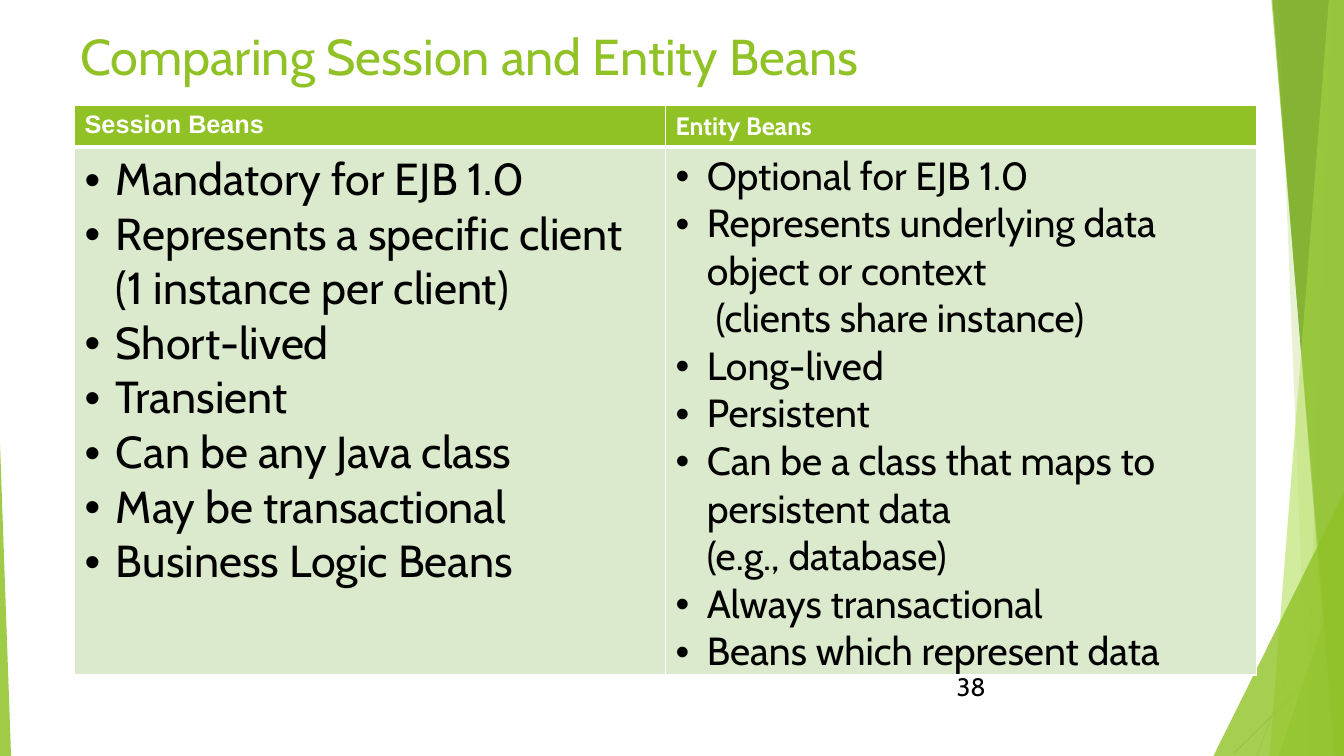
"""Build the slide that compares session and entity beans."""
import pptx
import pptx.dml.color
import pptx.enum.shapes
import pptx.enum.text
import pptx.oxml
import pptx.oxml.ns
import pptx.util

Inches, Pt = pptx.util.Inches, pptx.util.Pt
qn = pptx.oxml.ns.qn
MIDDLE = pptx.enum.text.MSO_ANCHOR.MIDDLE
GREEN, PALE, WHITE, BLACK = "90C226", "DBE9CD", "FFFFFF", "000000"
W, H, BASE = 13.33, 7.5, 7.51

TITLE = "Comparing Session and Entity Beans"
NUMBER = "38"
COLUMNS = [
    ("Session Beans", "Arial", 32, [
        "Mandatory for EJB 1.0",
        "Represents a specific client\n(1 instance per client)",
        "Short-lived",
        "Transient",
        "Can be any Java class",
        "May be transactional",
        "Business Logic Beans",
    ]),
    ("Entity Beans", "Cabin", 28, [
        "Optional for EJB 1.0",
        "Represents underlying data object or context\n (clients share instance)",
        "Long-lived",
        "Persistent",
        "Can be a class that maps to persistent data \n(e.g., database)",
        "Always transactional",
        "Beans which represent data",
    ]),
]
LINES = [((13.3, 6.43), (12.24, 7.47), "BFBFBF"),
         ((13.14, 5.72), (12.35, 7.8), "D9D9D9")]
# kind, geometry, colour, opacity
FACETS = [
    ("band", (13.21, 12.95), GREEN, 30),
    ("band", (12.68, 12.98), GREEN, 20),
    ("triangle", (12.68, 5.54, 0.66, 1), "54A021", 72),
    ("band", (12.62, 13.23), "3F7819", 70),
    ("band", (13.18, 12.59), "C0E474", 70),
    ("band", (12.61, 13.25), GREEN, 65),
    ("triangle", (12.03, 4.89, 1.3, 1), GREEN, 80),
    ("triangle", (0, 4.4, 0.11, 0), GREEN, 85),
]


def rgb(color):
    return pptx.dml.color.RGBColor.from_string(color)


def xml(tag, inner="", attrs=""):
    ns = pptx.oxml.ns.nsdecls("a")
    return pptx.oxml.parse_xml(f"<a:{tag} {ns} {attrs}>{inner}</a:{tag}>")


def write(p, text, size=18, font="Cabin", color=BLACK, bold=False, bullet=False):
    for i, part in enumerate(text.split("\n")):
        if i:
            p.add_line_break()
        r = p.add_run()
        r.text = part
        r.font.size, r.font.name, r.font.bold = Pt(size), font, bold
        r.font.color.rgb = rgb(color)
    if bullet:
        pPr = p._p.get_or_add_pPr()
        pPr.set("marL", str(Inches(0.31)))
        pPr.set("indent", str(-Inches(0.31)))
        pPr.append(xml("buFont", attrs='typeface="Arial"'))
        pPr.append(xml("buChar", attrs='char="•"'))


def add_text(s, box, text, **fmt):
    tf = s.shapes.add_textbox(*map(Inches, box)).text_frame
    tf.word_wrap, tf.vertical_anchor = True, MIDDLE
    write(tf.paragraphs[0], text, **fmt)


def add_line(s, start, end, color):
    line = s.shapes.add_connector(pptx.enum.shapes.MSO_CONNECTOR.STRAIGHT,
                                  *map(Inches, start + end))
    line.line.color.rgb, line.line.width = rgb(color), Pt(0.75)
    line._element.spPr.append(xml("effectLst"))


def add_facet(s, kind, geometry, color, opacity):
    if kind == "band":
        top, bottom = geometry
        points = [(top, 0), (W, 0), (W, BASE), (bottom, BASE)]
        points = [(Inches(x), Inches(y)) for x, y in points]
        fb = s.shapes.build_freeform(*points[0])
        fb.add_line_segments(points[1:], close=True)
        sp = fb.convert_to_shape()
    else:
        left, top, width, apex = geometry
        sp = s.shapes.add_shape(pptx.enum.shapes.MSO_SHAPE.ISOSCELES_TRIANGLE,
                                *map(Inches, (left, top, width, BASE - top)))
        sp.adjustments[0] = apex
    sp.shadow.inherit = False
    sp.line.fill.background()
    sp.fill.solid()
    sp.fill.fore_color.rgb = rgb(color)
    clr = sp._element.spPr.find(qn("a:solidFill"))[0]
    clr.append(xml("alpha", attrs=f'val="{opacity * 1000}"'))


def style_cell(cell, fill, bottom, top):
    cell.fill.solid()
    cell.fill.fore_color.rgb = rgb(fill)
    paint = f'<a:solidFill><a:srgbClr val="{WHITE}"/></a:solidFill>'
    sides = [("lnL", 1), ("lnR", 1), ("lnT", top), ("lnB", bottom)]
    for i, (side, width) in enumerate(sides):
        cell._tc.get_or_add_tcPr().insert(i, xml(side, paint, f'w="{Pt(width)}"'))


def add_comparison(s):
    heights = [0.41, 5.23]
    table = s.shapes.add_table(2, 2, *map(Inches, (0.74, 1.05, 11.72, sum(heights)))).table
    for row, height in zip(table.rows, heights):
        row.height = Inches(height)
    for c, (heading, font, size, items) in enumerate(COLUMNS):
        table.columns[c].width = Inches(5.86)
        head, body = table.cell(0, c), table.cell(1, c)
        style_cell(head, GREEN, bottom=3, top=1)
        style_cell(body, PALE, bottom=1, top=3)
        write(head.text_frame.paragraphs[0], heading, font=font, color=WHITE, bold=True)
        tf = body.text_frame
        for i, item in enumerate(items):
            p = tf.add_paragraph() if i else tf.paragraphs[0]
            write(p, item, size=size, bullet=True)


def main():
    prs = pptx.Presentation()
    prs.slide_width, prs.slide_height = Inches(W), Inches(H)
    s = prs.slides.add_slide(prs.slide_layouts[6])
    for line in LINES:
        add_line(s, *line)
    for facet in FACETS:
        add_facet(s, *facet)
    add_text(s, (0.7, 0.18, 11.76, 0.73), TITLE, size=36, color=GREEN)
    add_comparison(s)
    add_text(s, (9.39, 6.61, 0.75, 0.4), NUMBER)
    prs.save("out.pptx")


if __name__ == "__main__":
    main()
